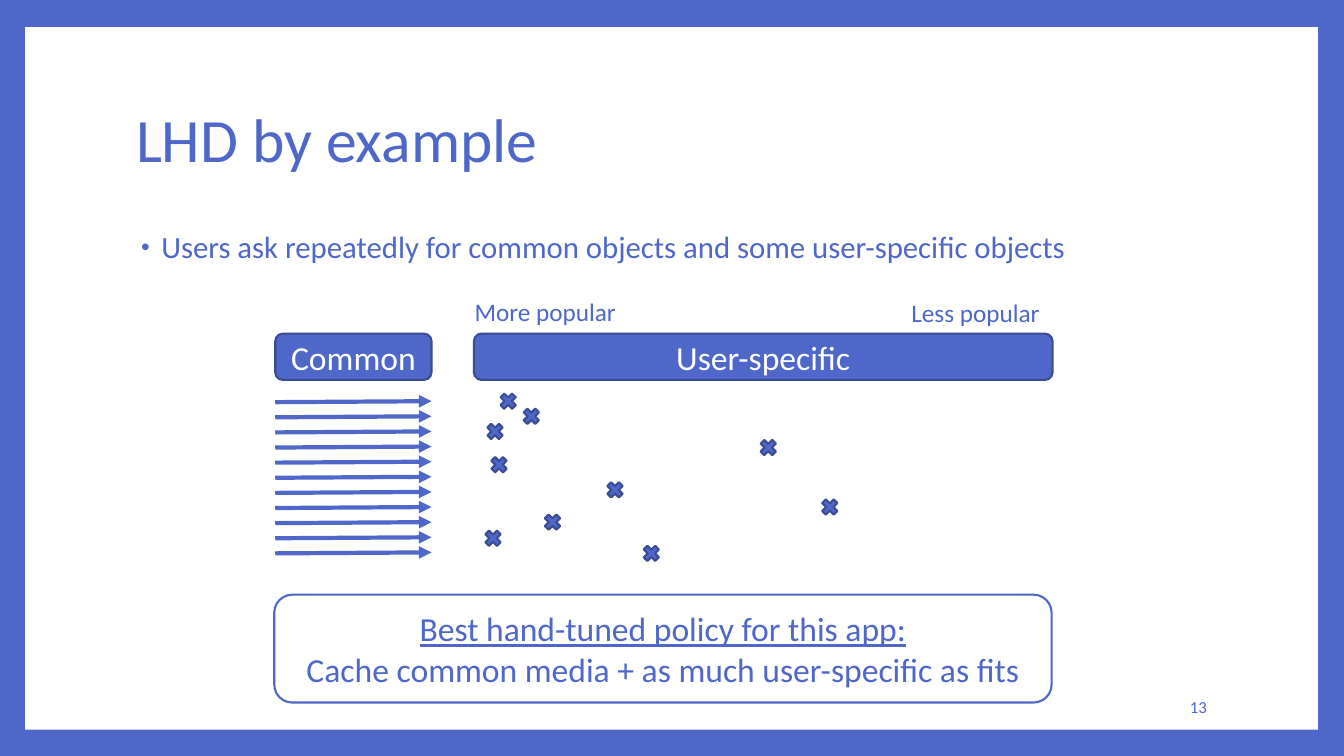
from dataclasses import dataclass

from lxml.etree import SubElement as Sub
from pptx import Presentation
from pptx.dml.color import RGBColor as Rgb
from pptx.enum.shapes import MSO_CONNECTOR as Link, MSO_SHAPE as Kind
from pptx.enum.text import MSO_ANCHOR as Anchor, MSO_AUTO_SIZE as Fit, PP_ALIGN as Align
from pptx.oxml.ns import qn
from pptx.util import Inches, Pt

HUES = {"blue": "4E67C8", "navy": "3A4C94", "white": "FFFFFF"}
FONT = "Calibri"


@dataclass
class Box:
    left: float
    top: float
    width: float
    height: float

    def place(self) -> list:
        return [Inches(n) for n in (self.left, self.top, self.width, self.height)]


@dataclass
class Label:
    text: str
    box: Box
    size: int
    align: Align
    wrap: bool = False


# Headers over the two kinds of object
HEADS = [("Common", Box(2.73, 3.31, 1.55, 0.46)),
         ("User-specific", Box(4.7, 3.31, 5.74, 0.46))]
LABELS = [
    Label("More popular", Box(4.61, 2.89, 1.6, 0.4), 18, Align.LEFT),
    Label("Less popular", Box(8.92, 2.9, 1.51, 0.4), 18, Align.CENTER),
    Label("13", Box(10.2, 6.81, 1.87, 0.4), 12, Align.RIGHT, True),
]
# Left and top of each request mark
MARKS = [(4.93, 3.87), (5.16, 4.02), (4.8, 4.17), (7.51, 4.33), (5.99, 4.75),
         (4.84, 4.5), (8.12, 4.92), (5.37, 5.07), (4.78, 5.23), (6.35, 5.38)]
MARK = 0.22
ROWS, FIRST, STEP, RISE = 11, 3.99, 0.15, 0.01


def hue(name: str) -> Rgb:
    return Rgb.from_string(HUES[name])


def style(para, size: int, color: str, align: Align = Align.LEFT) -> None:
    para.alignment = align
    para.font.name = FONT
    para.font.size = Pt(size)
    para.font.color.rgb = hue(color)


def add_form(slide, kind: Kind, box: Box, fill: str, line: str = ""):
    form = slide.shapes.add_shape(kind, *box.place())
    form.shadow.inherit = False
    form.fill.solid()
    form.fill.fore_color.rgb = hue(fill)
    if line:
        form.line.color.rgb = hue(line)
        form.line.width = Pt(1.5)
    else:
        form.line.fill.background()
    form.text_frame.vertical_anchor = Anchor.MIDDLE
    return form


def add_label(slide, label: Label) -> None:
    frame = slide.shapes.add_textbox(*label.box.place()).text_frame
    frame.word_wrap = label.wrap
    frame.vertical_anchor = Anchor.MIDDLE if label.wrap else Anchor.TOP
    frame.auto_size = Fit.NONE if label.wrap else Fit.SHAPE_TO_FIT_TEXT
    frame.text = label.text
    style(frame.paragraphs[0], label.size, "blue", label.align)


def add_arrow(slide, top: float) -> None:
    ends = [Inches(n) for n in (2.73, top, 4.28, top - RISE)]
    arrow = slide.shapes.add_connector(Link.STRAIGHT, *ends)
    arrow.line.color.rgb = hue("blue")
    arrow.line.width = Pt(3)
    Sub(arrow.line._get_or_add_ln(), qn("a:tailEnd"), type="triangle")
    Sub(arrow.element.spPr, qn("a:effectLst"))


def fill_holder(holder, box: Box, text: str, size: int, anchor: Anchor):
    holder.left, holder.top, holder.width, holder.height = box.place()
    frame = holder.text_frame
    frame.text = text
    frame.auto_size = Fit.NONE
    frame.vertical_anchor = anchor
    para = frame.paragraphs[0]
    style(para, size, "blue")
    para.line_spacing = 0.9
    return para


def add_bullet(para) -> None:
    props = para._p.get_or_add_pPr()
    props.set("marL", str(Inches(0.25)))
    props.set("indent", str(Inches(-0.2)))
    Sub(Sub(props, qn("a:buClr")), qn("a:srgbClr"), val=HUES["blue"])
    Sub(props, qn("a:buSzPct"), val="80000")
    Sub(props, qn("a:buFont"), typeface="Arial")
    Sub(props, qn("a:buChar"), char="•")


def main() -> None:
    deck = Presentation()
    deck.slide_width, deck.slide_height = Inches(13.33), Inches(7.5)
    slide = deck.slides.add_slide(deck.slide_layouts[1])

    # Blue frame around a white panel
    slide.background.fill.solid()
    slide.background.fill.fore_color.rgb = hue("blue")
    panel = add_form(slide, Kind.RECTANGLE, Box(0.25, 0.27, 12.82, 6.97), "white")
    title, body = slide.shapes.title, slide.placeholders[1]
    title.element.addprevious(panel.element)

    # Title and list
    fill_holder(title, Box(1.25, 0.67, 10.8, 1.48), "LHD by example", 44, Anchor.MIDDLE)
    point = fill_holder(
        body, Box(1.25, 2.25, 10.8, 4.42),
        "Users ask repeatedly for common objects and some user-specific objects",
        22, Anchor.TOP)
    point.space_before = Pt(14)
    add_bullet(point)

    # Headers and labels
    for text, box in HEADS:
        head = add_form(slide, Kind.ROUNDED_RECTANGLE, box, "blue", "navy")
        head.text_frame.text = text
        style(head.text_frame.paragraphs[0], 24, "white", Align.CENTER)
    for label in LABELS:
        add_label(slide, label)

    # Steady requests for common objects
    for row in range(ROWS):
        add_arrow(slide, FIRST + row * STEP)

    # Scattered requests for user objects
    for left, top in MARKS:
        add_form(slide, Kind.MATH_MULTIPLY, Box(left, top, MARK, MARK), "blue", "navy")

    # Policy box
    note = add_form(slide, Kind.ROUNDED_RECTANGLE, Box(2.72, 5.9, 7.71, 1.07),
                    "white", "blue")
    para = note.text_frame.paragraphs[0]
    style(para, 24, "blue", Align.CENTER)
    lead = para.add_run()
    lead.text = "Best hand-tuned policy for this app:"
    lead.font.underline = True
    para.add_line_break()
    para.add_run().text = "Cache common media + as much user-specific as fits"

    deck.save("out.pptx")


if __name__ == "__main__":
    main()
